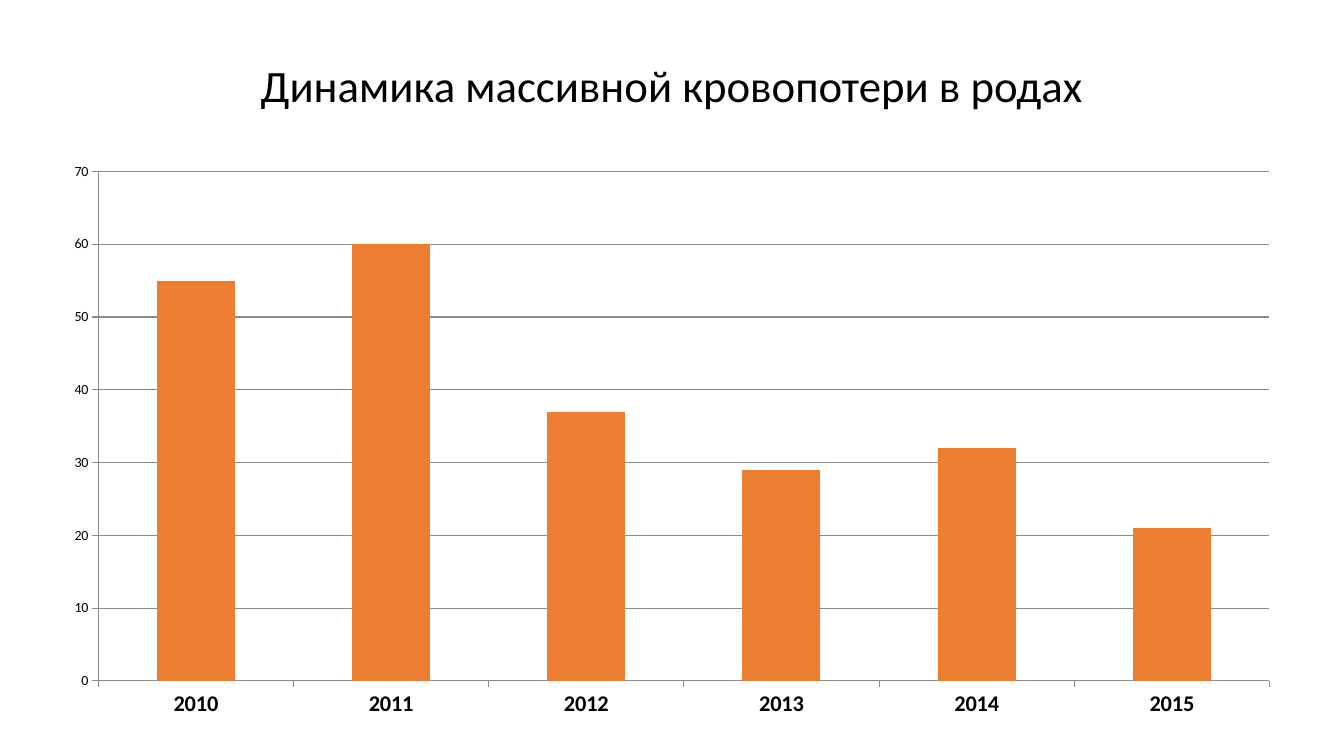
"""Build a slide with a column chart of massive blood loss in childbirth."""
from dataclasses import dataclass

from pptx import Presentation
from pptx.chart.data import CategoryChartData
from pptx.dml.color import RGBColor
from pptx.enum.chart import XL_CHART_TYPE, XL_TICK_MARK
from pptx.enum.text import MSO_ANCHOR, PP_ALIGN
from pptx.util import Cm, Pt

COLUMN = XL_CHART_TYPE.COLUMN_CLUSTERED
OUT = XL_TICK_MARK.OUTSIDE
NONE = XL_TICK_MARK.NONE
MIDDLE = MSO_ANCHOR.MIDDLE
CENTER = PP_ALIGN.CENTER


@dataclass(frozen=True)
class Theme:
    font: str = "Calibri"
    ink: RGBColor = RGBColor(0, 0, 0)
    bar: RGBColor = RGBColor(0xED, 0x7D, 0x31)
    line: RGBColor = RGBColor(0x8B, 0x8B, 0x8B)
    head: Pt = Pt(32)
    year: Pt = Pt(16)
    small: Pt = Pt(10)


def apply(item, **values):
    for name, value in values.items():
        setattr(item, name, value)


class Deck:
    def __init__(self, theme):
        self.theme = theme
        self.show = Presentation()
        apply(self.show, slide_width=Cm(33.87), slide_height=Cm(19.05))
        self.slide = self.show.slides.add_slide(self.show.slide_layouts[5])

    def style(self, font, size, bold=False):
        apply(font, name=self.theme.font, size=size, bold=bold)
        font.color.rgb = self.theme.ink

    def stroke(self, line):
        line.width = Pt(0.75)
        line.color.rgb = self.theme.line

    def title(self, text, left, top, width, height):
        box = self.slide.shapes.title
        apply(box, left=left, top=top, width=width, height=height)
        frame = box.text_frame
        apply(frame, text=text, word_wrap=True, vertical_anchor=MIDDLE)
        para = frame.paragraphs[0]
        apply(para, alignment=CENTER, line_spacing=0.9)
        self.style(para.runs[0].font, self.theme.head)

    def columns(self, name, points, left, top, width, height):
        data = CategoryChartData()
        data.categories = list(points)
        data.add_series(name, list(points.values()))
        chart = self.slide.shapes.add_chart(
            COLUMN, left, top, width, height, data).chart
        apply(chart, has_legend=False, has_title=False)
        self.style(chart.font, self.theme.small)
        plot = chart.plots[0]
        apply(plot, gap_width=150, vary_by_categories=False)
        fill = plot.series[0].format.fill
        fill.solid()
        fill.fore_color.rgb = self.theme.bar
        years, scale = chart.category_axis, chart.value_axis
        for axis in (years, scale):
            apply(axis, major_tick_mark=OUT, minor_tick_mark=NONE)
            self.stroke(axis.format.line)
        self.style(years.tick_labels.font, self.theme.year, True)
        self.style(scale.tick_labels.font, self.theme.small)
        apply(scale, minimum_scale=0, maximum_scale=70, major_unit=10,
              has_major_gridlines=True)
        self.stroke(scale.major_gridlines.format.line)


def main():
    deck = Deck(Theme())
    deck.title("Динамика массивной кровопотери в родах",
               Cm(2.33), Cm(1.01), Cm(29.21), Cm(2.4))
    cases = {"2010": 55, "2011": 60, "2012": 37,
             "2013": 29, "2014": 32, "2015": 21}
    deck.columns("Series 1", cases, Cm(1.25), Cm(3.83), Cm(31.37), Cm(14.56))
    deck.show.save("out.pptx")


if __name__ == "__main__":
    main()
